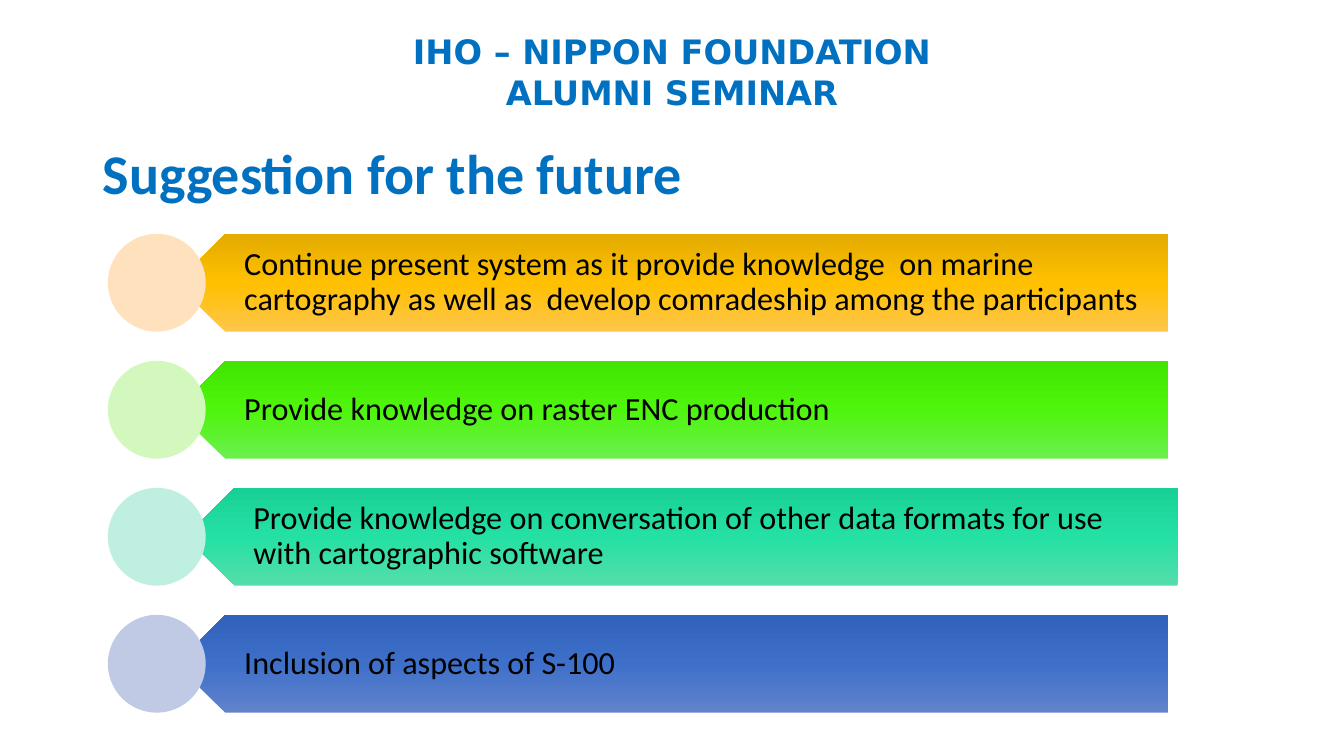
"""Build the alumni seminar slide with four suggestions for the future."""
import copy

import pptx
import pptx.dml.color
import pptx.enum.shapes
import pptx.enum.text
import pptx.util

RGBColor = pptx.dml.color.RGBColor
MSO_SHAPE = pptx.enum.shapes.MSO_SHAPE
PP_ALIGN = pptx.enum.text.PP_ALIGN
MSO_ANCHOR = pptx.enum.text.MSO_ANCHOR
Inches = pptx.util.Inches

BLUE = RGBColor(0x00, 0x70, 0xC0)
BLACK = RGBColor(0x00, 0x00, 0x00)
AMBER = [RGBColor(0xFF, 0xC6, 0x4B), RGBColor(0xFF, 0xC0, 0x00), RGBColor(0xE3, 0xAB, 0x00)]
GREEN = [RGBColor(0x6B, 0xEF, 0x4D), RGBColor(0x4F, 0xF5, 0x0D), RGBColor(0x41, 0xE5, 0x00)]
TEAL = [RGBColor(0x55, 0xDD, 0xAB), RGBColor(0x25, 0xE0, 0xA4), RGBColor(0x18, 0xD0, 0x95)]
INDIGO = [RGBColor(0x61, 0x83, 0xCB), RGBColor(0x3E, 0x70, 0xCA), RGBColor(0x30, 0x62, 0xBB)]
PALE_AMBER = RGBColor(0xFF, 0xE2, 0xBD)
PALE_GREEN = RGBColor(0xD3, 0xF8, 0xBD)
PALE_TEAL = RGBColor(0xBE, 0xEF, 0xE0)
PALE_INDIGO = RGBColor(0xC1, 0xCA, 0xE4)

ROW_TOP, ROW_PITCH, ROW_HEIGHT = 2.32, 1.26, 0.97
CIRCLE_LEFT, ARROW_LEFT, ARROW_WIDTH = 1.07, 1.75, 9.84
LABEL_INDENT = ROW_HEIGHT / 4

SUGGESTIONS = [
    ("Continue present system as it provide knowledge  on marine cartography "
     "as well as  develop comradeship among the participants", AMBER, PALE_AMBER, 0),
    ("Provide knowledge on raster ENC production", GREEN, PALE_GREEN, 0),
    ("Provide knowledge on conversation of other data formats for use "
     "with cartographic software", TEAL, PALE_TEAL, 0.09),
    ("Inclusion of aspects of S-100", INDIGO, PALE_INDIGO, 0),
]


def add_text(shapes, box, lines, size, font, color, bold=False, align=PP_ALIGN.LEFT,
             anchor=MSO_ANCHOR.TOP, spacing=1.0, insets=(0.1, 0.05, 0.1, 0.05)):
    tf = shapes.add_textbox(*map(Inches, box)).text_frame
    tf.word_wrap = True
    tf.vertical_anchor = anchor
    tf.margin_left, tf.margin_top, tf.margin_right, tf.margin_bottom = map(Inches, insets)
    for i, line in enumerate(lines):
        p = tf.add_paragraph() if i else tf.paragraphs[0]
        p.alignment = align
        p.line_spacing = spacing
        r = p.add_run()
        r.text = line
        r.font.size = pptx.util.Pt(size)
        r.font.name = font
        r.font.bold = bold
        r.font.color.rgb = color


def add_plain_shape(shapes, kind, box):
    sp = shapes.add_shape(kind, *map(Inches, box))
    sp.shadow.inherit = False
    sp.line.fill.background()
    return sp


def fill_gradient(sp, colors):
    sp.fill.gradient()
    sp.fill.gradient_angle = 270
    first = sp.fill.gradient_stops[0]._gs
    first.addnext(copy.deepcopy(first))
    for i, (stop, color) in enumerate(zip(sp.fill.gradient_stops, colors)):
        stop.position = i / 2
        stop.color.rgb = color


def add_suggestion(shapes, row, text, gradient, pale, shift):
    top = ROW_TOP + row * ROW_PITCH
    left = ARROW_LEFT + shift
    arrow = add_plain_shape(shapes, MSO_SHAPE.PENTAGON, (left, top, ARROW_WIDTH, ROW_HEIGHT))
    arrow.rotation = 180
    fill_gradient(arrow, gradient)
    label = (left + LABEL_INDENT, top, ARROW_WIDTH - LABEL_INDENT, ROW_HEIGHT)
    add_text(shapes, label, [text], 23, "Calibri", BLACK, anchor=MSO_ANCHOR.MIDDLE,
             spacing=0.9, insets=(0.43, 0.1, 0.18, 0.1))
    circle = add_plain_shape(shapes, MSO_SHAPE.OVAL, (CIRCLE_LEFT, top, ROW_HEIGHT, ROW_HEIGHT))
    circle.fill.solid()
    circle.fill.fore_color.rgb = pale


def main():
    prs = pptx.Presentation()
    prs.slide_width, prs.slide_height = Inches(13.33), Inches(7.5)
    s = prs.slides.add_slide(prs.slide_layouts[6])
    add_text(s.shapes, (0.92, 1.39, 11.5, 0.71), ["Suggestion for the future"], 40,
             "Calibri", BLUE, bold=True, anchor=MSO_ANCHOR.MIDDLE, spacing=0.9)
    group = s.shapes.add_group_shape()
    for row, suggestion in enumerate(SUGGESTIONS):
        add_suggestion(group.shapes, row, *suggestion)
    add_text(s.shapes, (3.76, 0.26, 5.81, 0.91), ["IHO – NIPPON FOUNDATION", "ALUMNI SEMINAR"],
             24, "DejaVu Sans", BLUE, bold=True, align=PP_ALIGN.CENTER)
    prs.save("out.pptx")


if __name__ == "__main__":
    main()
